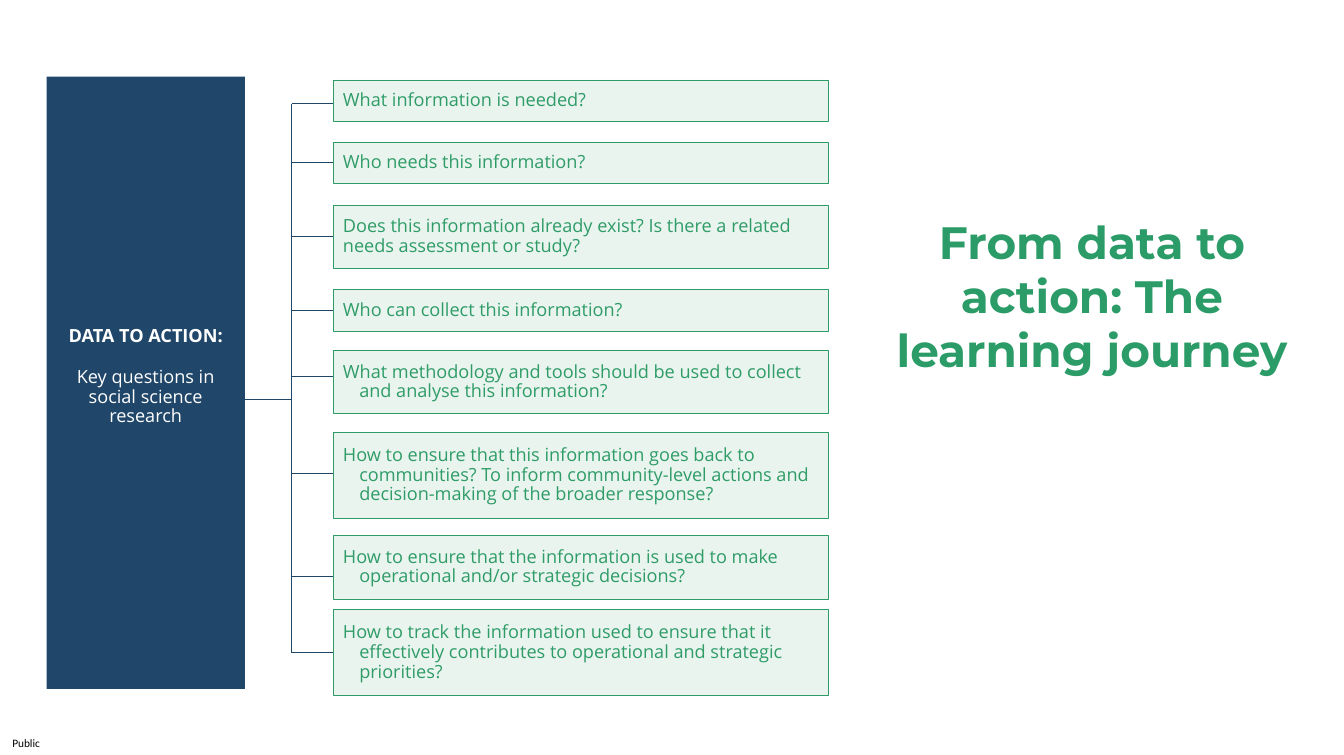
from lxml import etree
from pptx import Presentation
from pptx.dml.color import RGBColor
from pptx.enum.shapes import MSO_CONNECTOR, MSO_SHAPE
from pptx.enum.text import MSO_ANCHOR, MSO_AUTO_SIZE, PP_ALIGN
from pptx.oxml.ns import qn
from pptx.util import Inches, Pt

STRAIGHT = MSO_CONNECTOR.STRAIGHT
RECTANGLE = MSO_SHAPE.RECTANGLE
TOP, MIDDLE = MSO_ANCHOR.TOP, MSO_ANCHOR.MIDDLE
LEFT, CENTER = PP_ALIGN.LEFT, PP_ALIGN.CENTER
LEFT_SIDE = 1

WIDTH, HEIGHT = Inches(16.46), Inches(9.25)
COLUMN, ROW = WIDTH / 100, HEIGHT / 100

NAVY, GREEN, TITLE_GREEN = "204669", "2F9C67", "2B9C67"
WHITE, BLACK = "FFFFFF", "000000"

PANEL = (3.46, 10.16, 14.76, 81.08)
TITLE = (63.3, 27.78, 35.9, 22.92)
LABEL = (0, 96.86, 3.89, 3.14)
BOX_LEFT, BOX_WIDTH = 24.79, 36.88
BOX_PADDING, LINE_ROWS = 2.59, 2.92
TRUNK, ROOT_ROW = 21.69, 52.97
HANGING = Inches(0.2)

BODY = {"name": "Open Sans", "size": Pt(16), "bold": False}
HEADING = {**BODY, "bold": True}
TITLE_FONT = {"name": "Montserrat", "size": Pt(40), "bold": True}
LABEL_FONT = {"name": "Calibri", "size": Pt(10), "bold": False}
TIGHT = {"line_spacing": 0.9, "space_before": Pt(0), "space_after": Pt(0)}

# top row, text lines, hanging indent, branch offset from the box middle
QUESTIONS = [
    (10.59, 1, HANGING, 0.38, "What information is needed?"),
    (18.81, 1, HANGING, 0, "Who needs this information?"),
    (27.14, 2, 0, 0, "Does this information already exist? Is there a related "
     "needs assessment or study?"),
    (38.38, 1, HANGING, 0, "Who can collect this information?"),
    (46.38, 2, HANGING, -0.76, "What methodology and tools should be used to "
     "collect and analyse this information?"),
    (57.3, 3, HANGING, -0.27, "How to ensure that this information goes back to "
     "communities? To inform community-level actions and decision-making of "
     "the broader response?"),
    (70.92, 2, HANGING, 1.24, "How to ensure that the information is used to make "
     "operational and/or strategic decisions?"),
    (80.76, 3, HANGING, 0, "How to track the information used to ensure that it "
     "effectively contributes to operational and strategic priorities?"),
]


def color(value):
    return RGBColor.from_string(value)


def apply(target, values):
    for name, value in values.items():
        setattr(target, name, value)


def place(left, top, width, height):
    return (round(left * COLUMN), round(top * ROW),
            round(width * COLUMN), round(height * ROW))


def format_frame(frame, margin, anchor):
    apply(frame, {"word_wrap": True, "auto_size": MSO_AUTO_SIZE.NONE,
                  "vertical_anchor": anchor, "margin_left": margin,
                  "margin_right": margin, "margin_top": margin,
                  "margin_bottom": margin})


def write(paragraph, text, font, font_color, alignment, spacing):
    apply(paragraph, {"alignment": alignment, **spacing})
    run = paragraph.add_run()
    run.text = text
    apply(run.font, font)
    run.font.color.rgb = color(font_color)


def add_rectangle(slide, area, fill):
    shape = slide.shapes.add_shape(RECTANGLE, *place(*area))
    shape.shadow.inherit = False
    shape.fill.solid()
    shape.fill.fore_color.rgb = color(fill)
    shape.line.fill.background()
    format_frame(shape.text_frame, Inches(0.12), MIDDLE)
    return shape


def add_panel(slide):
    frame = add_rectangle(slide, PANEL, NAVY).text_frame
    frame.margin_bottom = Inches(0.27)
    write(frame.paragraphs[0], "DATA TO ACTION:", HEADING, WHITE, CENTER,
          {**TIGHT, "space_after": Pt(19.6)})
    write(frame.add_paragraph(), "Key questions in social science research",
          BODY, WHITE, CENTER, TIGHT)


def add_question(slide, top, lines, hanging, text):
    height = BOX_PADDING + LINE_ROWS * lines
    box = add_rectangle(slide, (BOX_LEFT, top, BOX_WIDTH, height), GREEN)
    tint = box.fill._xPr.find(qn("a:solidFill"))[0]
    etree.SubElement(tint, qn("a:alpha")).set("val", "10000")
    box.line.color.rgb = color(GREEN)
    box.line.width = Pt(0.75)
    paragraph = box.text_frame.paragraphs[0]
    write(paragraph, text, BODY, GREEN, LEFT, TIGHT)
    properties = paragraph._p.get_or_add_pPr()
    properties.set("marL", str(hanging))
    properties.set("indent", str(-hanging))
    return box, top + height / 2


def add_line(slide, start, end):
    x1, y1, x2, y2 = place(*start, *end)
    line = slide.shapes.add_connector(STRAIGHT, x1, y1, x2, y2)
    line.line.color.rgb = color(NAVY)
    line.line.width = Pt(1)
    etree.SubElement(line._element.spPr, qn("a:effectLst"))
    return line


def add_tree(slide):
    branch_rows = []
    for top, lines, hanging, offset, text in QUESTIONS:
        box, middle = add_question(slide, top, lines, hanging, text)
        row = middle + offset
        branch = add_line(slide, (TRUNK, row), (BOX_LEFT, row))
        if not offset:
            branch.end_connect(box, LEFT_SIDE)
        branch_rows.append(row)
    add_line(slide, (TRUNK, branch_rows[0]), (TRUNK, branch_rows[-1]))
    add_line(slide, (PANEL[0] + PANEL[2], ROOT_ROW), (TRUNK, ROOT_ROW))


def add_title(slide):
    title = slide.shapes.title
    apply(title, dict(zip(("left", "top", "width", "height"), place(*TITLE))))
    format_frame(title.text_frame, Inches(0.05), TOP)
    apply(title.text_frame, {"margin_left": Inches(0.1),
                             "margin_right": Inches(0.1)})
    write(title.text_frame.paragraphs[0],
          "From data to action: The learning journey",
          TITLE_FONT, TITLE_GREEN, CENTER, {**TIGHT, "line_spacing": 1.0})


def add_label(slide):
    frame = slide.shapes.add_textbox(*place(*LABEL)).text_frame
    format_frame(frame, 0, MIDDLE)
    write(frame.paragraphs[0], "Public", LABEL_FONT, BLACK, CENTER, {})


def main():
    presentation = Presentation()
    apply(presentation, {"slide_width": WIDTH, "slide_height": HEIGHT})
    slide = presentation.slides.add_slide(presentation.slide_layouts[5])
    add_label(slide)
    add_title(slide)
    add_panel(slide)
    add_tree(slide)
    presentation.save("out.pptx")


if __name__ == "__main__":
    main()
